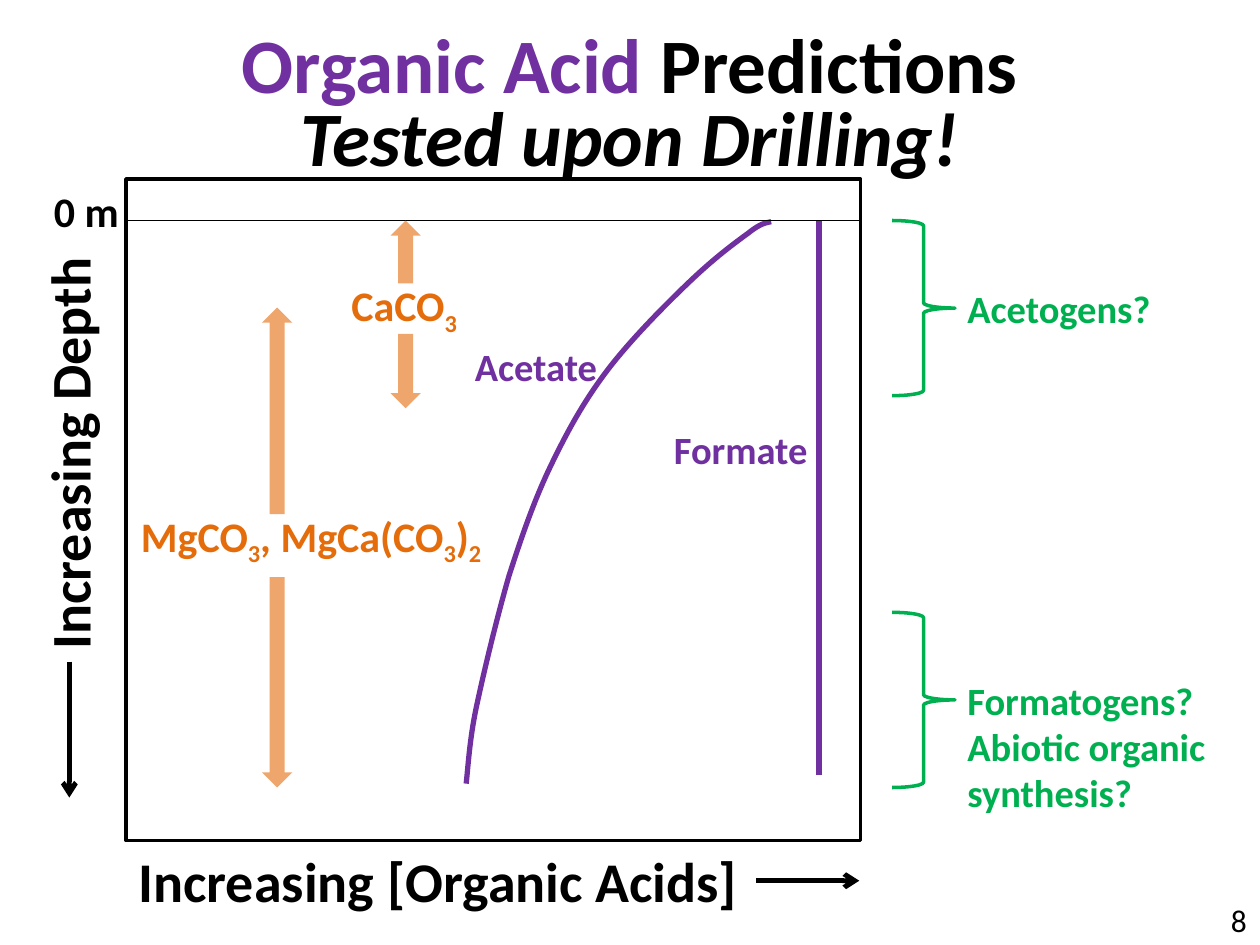
from lxml import etree
from pptx import Presentation
from pptx.dml.color import RGBColor
from pptx.enum.shapes import MSO_CONNECTOR, MSO_SHAPE
from pptx.enum.text import MSO_ANCHOR, MSO_AUTO_SIZE, PP_ALIGN
from pptx.oxml.ns import qn
from pptx.util import Inches, Pt

BLACK = RGBColor(0x00, 0x00, 0x00)
PURPLE = RGBColor(0x70, 0x30, 0xA0)
GREEN = RGBColor(0x00, 0xB0, 0x50)
ORANGE = RGBColor(0xE4, 0x6C, 0x0A)
STRAIGHT = MSO_CONNECTOR.STRAIGHT
BRACE, RECTANGLE = MSO_SHAPE.RIGHT_BRACE, MSO_SHAPE.RECTANGLE
UP, DOWN = MSO_SHAPE.UP_ARROW, MSO_SHAPE.DOWN_ARROW
LEFT, CENTER = PP_ALIGN.LEFT, PP_ALIGN.CENTER
TOP, MIDDLE = MSO_ANCHOR.TOP, MSO_ANCHOR.MIDDLE
FIT, FIXED = MSO_AUTO_SIZE.SHAPE_TO_FIT_TEXT, MSO_AUTO_SIZE.NONE
FONT = "Calibri"

SURFACE = 1.75
PLOT = (1, 1.42, 5.83, 5.25)
PLOT_RIGHT = PLOT[0] + PLOT[2]
BRACE_LEFT, BRACE_WIDTH, BRACE_HEIGHT = 7.08, 0.5, 1.39
NOTE_LEFT = BRACE_LEFT + BRACE_WIDTH
BRACE_TOPS = [SURFACE, 4.86]
MINERAL_ARROW_WIDTH = 0.24

ACETATE_CURVE = [
    (3.7, 6.22),
    (3.72, 6.03), (3.73, 5.84), (3.79, 5.57),
    (3.85, 5.29), (3.95, 4.88), (4.04, 4.57),
    (4.14, 4.26), (4.24, 3.97), (4.37, 3.7),
    (4.5, 3.43), (4.63, 3.19), (4.82, 2.94),
    (5.01, 2.69), (5.3, 2.4), (5.49, 2.22),
    (5.68, 2.04), (5.83, 1.93), (5.94, 1.85),
    (6.04, 1.77), (6.08, 1.77), (6.12, 1.76),
]
LINES = [
    ((6.5, SURFACE), (6.5, 6.15), PURPLE, 3, False),
    ((0.55, 5.25), (0.55, 6.33), BLACK, 2.75, True),
    ((6, 6.99), (6.82, 6.99), BLACK, 2.75, True),
    ((PLOT[0], SURFACE), (PLOT_RIGHT, SURFACE), BLACK, 1, False),
]
MINERAL_ARROWS = [
    (DOWN, 3.1, 2.65, 0.59),
    (UP, 3.1, SURFACE, 0.5),
    (DOWN, 2.08, 4.58, 1.67),
    (UP, 2.08, 2.44, 1.64),
]
TITLE = [[("Organic Acid ", PURPLE), ("Predictions", BLACK)]]
SUBTITLE = "Tested upon Drilling!"
CALCITE = [["CaCO", "_3"]]
MAGNESITE = [["MgCO", "_3", ", MgCa(CO", "_3", ")", "_2"]]
TITLE_FORMAT = dict(size=44, align=CENTER, anchor=MIDDLE, wrap=True, fit=FIXED)
LABELS = [
    (TITLE, (0, 0, 10, 1), TITLE_FORMAT),
    ("Acetogens?", (NOTE_LEFT, 2.21, 1.67, 0.47), dict(color=GREEN)),
    ("Increasing Depth", (-1.12, 3.27, 3.33, 0.64), dict(size=32, rotation=270)),
    ("Increasing [Organic Acids]", (1, 6.67, 5, 0.64), dict(size=32)),
    ("0 m", (0.33, 1.42, 0.72, 0.5), dict(size=24)),
    ("Acetate", (3.67, 2.67, 1.19, 0.47), dict(color=PURPLE)),
    ("Formate", (5.25, 3.33, 1.28, 0.47), dict(color=PURPLE)),
    (CALCITE, (2.69, 2.17, 1.07, 0.5), dict(size=24, color=ORANGE)),
    (SUBTITLE, (0, 0.58, 10, 1), dict(TITLE_FORMAT, italic=True)),
    (MAGNESITE, (1.02, 4, 2.98, 0.5), dict(size=24, color=ORANGE)),
    ([["Formatogens?"], ["Abiotic organic synthesis?"]],
     (NOTE_LEFT, 5.32, 2.33, 1.21), dict(color=GREEN, wrap=True)),
    ("8", (9.67, 7.1, 0.33, 0.4), dict(size=18, bold=False)),
]


def add_text(slide, content, box, size=22, color=BLACK, bold=True, italic=False,
             align=LEFT, anchor=TOP, wrap=False, fit=FIT, rotation=0):
    label = slide.shapes.add_textbox(*map(Inches, box))
    label.rotation = rotation
    frame = label.text_frame
    frame.word_wrap, frame.auto_size, frame.vertical_anchor = wrap, fit, anchor
    paragraphs = [[content]] if isinstance(content, str) else content
    for index, pieces in enumerate(paragraphs):
        paragraph = frame.add_paragraph() if index else frame.paragraphs[0]
        paragraph.alignment = align
        for piece in pieces:
            words, shade = (piece, color) if isinstance(piece, str) else piece
            run = paragraph.add_run()
            run.text = words.lstrip("_")
            font = run.font
            font.name, font.size, font.bold, font.italic = FONT, Pt(size), bold, italic
            font.color.rgb = shade
            if words.startswith("_"):
                run._r.get_or_add_rPr().set("baseline", "-25000")


def set_line(item, color, width):
    item.line.color.rgb = color
    item.line.width = Pt(width)


def add_outline(slide, kind, box, color):
    outline = slide.shapes.add_shape(kind, *map(Inches, box))
    outline.shadow.inherit = False
    outline.fill.background()
    set_line(outline, color, 2)


def add_mineral_arrow(slide, kind, left, top, height):
    arrow = slide.shapes.add_shape(
        kind, *map(Inches, (left, top, MINERAL_ARROW_WIDTH, height)))
    arrow.shadow.inherit = False
    arrow.fill.solid()
    arrow.fill.fore_color.rgb = ORANGE
    shade = arrow._element.spPr.find(qn("a:solidFill"))[0]
    etree.SubElement(shade, qn("a:alpha")).set("val", "60000")
    arrow.line.fill.background()


def add_line(slide, start, end, color, width, has_head):
    line = slide.shapes.add_connector(STRAIGHT, *map(Inches, start + end))
    set_line(line, color, width)
    if has_head:
        etree.SubElement(line.line._get_or_add_ln(), qn("a:tailEnd")).set("type", "arrow")
    etree.SubElement(line._element.spPr, qn("a:effectLst"))


def add_curve(slide, points, color, width):
    start, *rest = [(Inches(x), Inches(y)) for x, y in points]
    builder = slide.shapes.build_freeform(*start)
    builder.add_line_segments(rest, close=False)
    curve = builder.convert_to_shape()
    curve.shadow.inherit = False
    curve.fill.background()
    set_line(curve, color, width)
    outline = next(curve._element.iter(qn("a:path")))
    segments = outline.findall(qn("a:lnTo"))
    for first in range(0, len(segments), 3):
        bezier = etree.SubElement(outline, qn("a:cubicBezTo"))
        for segment in segments[first:first + 3]:
            bezier.append(segment[0])
            outline.remove(segment)


def main():
    deck = Presentation()
    deck.slide_width, deck.slide_height = Inches(10), Inches(7.5)
    slide = deck.slides.add_slide(deck.slide_layouts[6])
    for top in BRACE_TOPS:
        add_outline(slide, BRACE, (BRACE_LEFT, top, BRACE_WIDTH, BRACE_HEIGHT), GREEN)
    add_curve(slide, ACETATE_CURVE, PURPLE, 3)
    add_outline(slide, RECTANGLE, PLOT, BLACK)
    for line in LINES:
        add_line(slide, *line)
    for arrow in MINERAL_ARROWS:
        add_mineral_arrow(slide, *arrow)
    for content, box, style in LABELS:
        add_text(slide, content, box, **style)
    deck.save("out.pptx")


if __name__ == "__main__":
    main()
